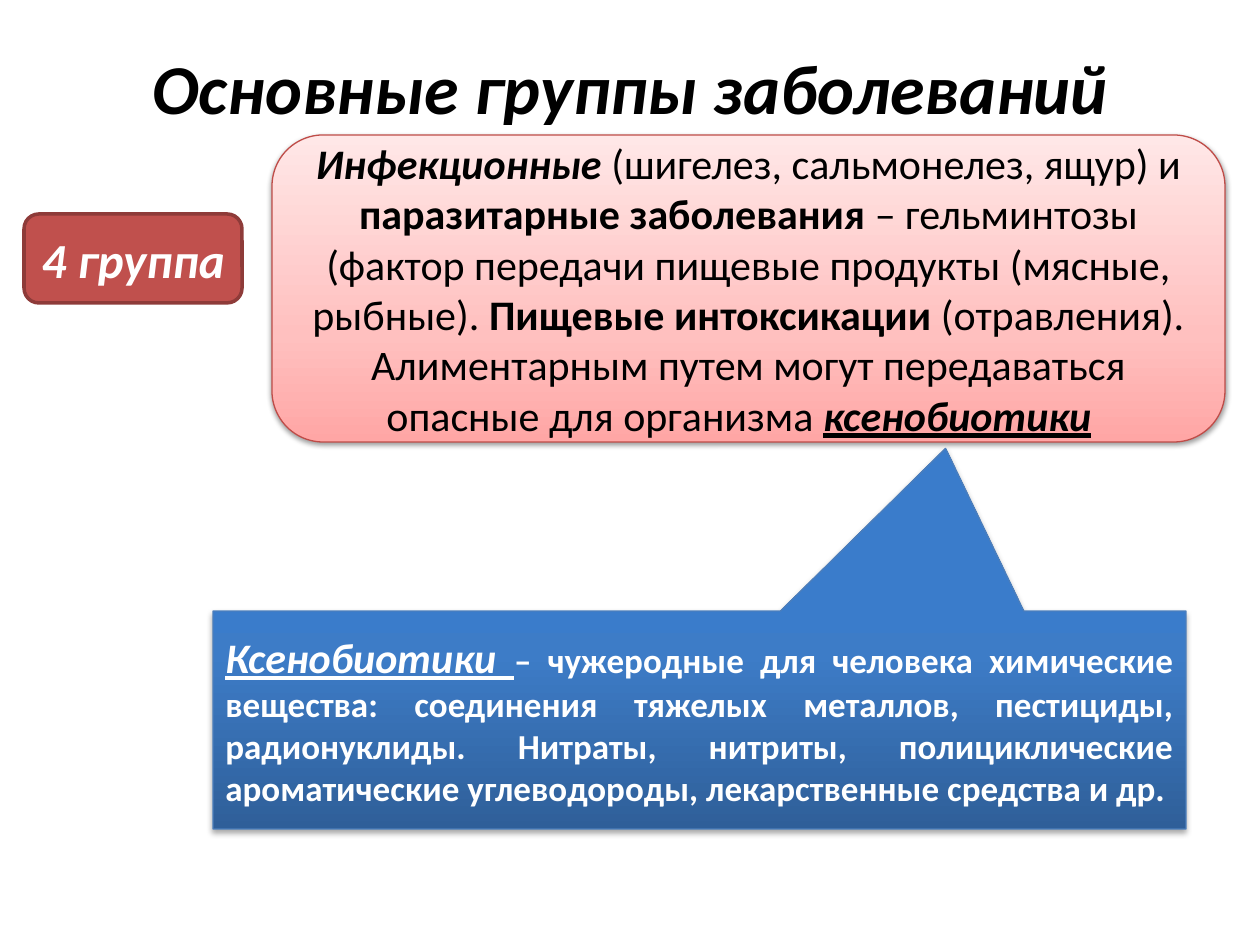
from lxml import etree
from pptx import Presentation
from pptx.dml.color import RGBColor
from pptx.enum.shapes import MSO_SHAPE
from pptx.enum.text import MSO_ANCHOR, MSO_AUTO_SIZE, PP_ALIGN
from pptx.oxml.ns import qn
from pptx.util import Emu, Pt

ROUND = MSO_SHAPE.ROUNDED_RECTANGLE
CALL = MSO_SHAPE.RECTANGULAR_CALLOUT
MID, FIXED = MSO_ANCHOR.MIDDLE, MSO_AUTO_SIZE.NONE
CENTER, JUST = PP_ALIGN.CENTER, PP_ALIGN.JUSTIFY
PX = 914400 / 126

HUES = {"black": "000000", "white": "FFFFFF", "red": "C0504D",
        "maroon": "8E3B39", "rose": "BF4C48", "blue": "4B7EBC"}
PINK = [(0, "FFA6A5"), (35, "FFC0BF"), (100, "FFE7E7")]
NAVY = [(0, "2F5F99"), (80, "3D7CC7"), (100, "3A7CCB")]

BOLD = {"bold": True}
SLANT = {"bold": True, "italic": True}
KEY = {"bold": True, "italic": True, "underline": True}

TITLE = {"at": (63, 38, 1134, 97), "size": 40, "ink": "black", "align": CENTER,
         "text": [[("Основные группы заболеваний", SLANT)]]}
BOXES = [
    {"at": (24, 214, 218, 89), "kind": ROUND, "fill": "red",
     "line": ("maroon", 2), "size": 28, "ink": "white", "align": CENTER,
     "text": [[("4 группа ", SLANT)]]},
    {"at": (272, 135, 953, 307), "kind": ROUND, "fill": PINK,
     "line": ("rose", 0.75), "shade": (38, 3.1, 1.6),
     "size": 24, "ink": "black", "align": CENTER,
     "text": [
         [("Инфекционные", SLANT),
          (" (шигелез, сальмонелез, ящур) и ", {}),
          ("паразитарные заболевания ", BOLD),
          ("– гельминтозы (фактор передачи пищевые продукты "
           "(мясные, рыбные). ", {}),
          ("Пищевые интоксикации ", BOLD),
          ("(отравления).", {})],
         [("Алиментарным путем могут передаваться опасные "
           "для организма ", {}),
          ("ксенобиотики", KEY),
          ("  ", {})]]},
    {"at": (213, 611, 973, 218), "kind": CALL, "fill": NAVY,
     "adj": (0.253, -1.246), "line": ("blue", 0.75), "shade": (35, 3.1, 1.8),
     "size": 20, "ink": "white", "align": JUST,
     "text": [
         [("Ксенобиотики ", {**KEY, "size": Pt(24)}),
          ("– чужеродные для человека химические вещества: соединения "
           "тяжелых металлов, пестициды, радионуклиды. Нитраты, нитриты, "
           "полициклические ароматические углеводороды, лекарственные "
           "средства и др. ", BOLD)]]},
]


def hue(name):
    return RGBColor.from_string(HUES[name])


def place(shape, at):
    for name, n in zip(("left", "top", "width", "height"), at):
        setattr(shape, name, Emu(round(n * PX)))


def write(shape, item):
    frame = shape.text_frame
    frame.word_wrap = True
    frame.auto_size = FIXED
    frame.vertical_anchor = MID
    for i, parts in enumerate(item["text"]):
        para = frame.add_paragraph() if i else frame.paragraphs[0]
        para.alignment = item["align"]
        for text, look in parts:
            run = para.add_run()
            run.text = text
            base = {"name": "Calibri", "size": Pt(item["size"]),
                    "bold": False, "italic": False}
            for key, val in {**base, **look}.items():
                setattr(run.font, key, val)
            run.font.color.rgb = hue(item["ink"])


def node(up, tag, **atts):
    return etree.SubElement(up, qn(tag), **atts)


def blend(shape, stops):
    shape.fill.gradient()
    shape.fill.gradient_angle = 90
    ramp = shape._element.spPr.find(".//" + qn("a:gsLst"))
    for old in list(ramp):
        ramp.remove(old)
    for pos, tint in stops:
        stop = node(ramp, "a:gs", pos=str(pos * 1000))
        node(stop, "a:srgbClr", val=tint)


def shade(shape, alpha, blur, dist):
    fx = shape._element.spPr.find(qn("a:effectLst"))
    drop = node(fx, "a:outerShdw", blurRad=str(Pt(blur)), dist=str(Pt(dist)),
                dir="5400000", rotWithShape="0")
    tint = node(drop, "a:srgbClr", val=HUES["black"])
    node(tint, "a:alpha", val=str(alpha * 1000))


def draw(slide, item):
    shape = slide.shapes.add_shape(item["kind"], 0, 0, 0, 0)
    place(shape, item["at"])
    for i, val in enumerate(item.get("adj", ())):
        shape.adjustments[i] = val
    if isinstance(item["fill"], list):
        blend(shape, item["fill"])
    else:
        shape.fill.solid()
        shape.fill.fore_color.rgb = hue(item["fill"])
    tint, width = item["line"]
    shape.line.color.rgb = hue(tint)
    shape.line.width = Pt(width)
    shape.shadow.inherit = False
    if "shade" in item:
        shade(shape, *item["shade"])
    write(shape, item)


def main():
    deck = Presentation()
    deck.slide_width, deck.slide_height = Emu(9144000), Emu(6858000)
    slide = deck.slides.add_slide(deck.slide_layouts[5])
    place(slide.shapes.title, TITLE["at"])
    write(slide.shapes.title, TITLE)
    for item in BOXES:
        draw(slide, item)
    deck.save("out.pptx")


if __name__ == "__main__":
    main()
